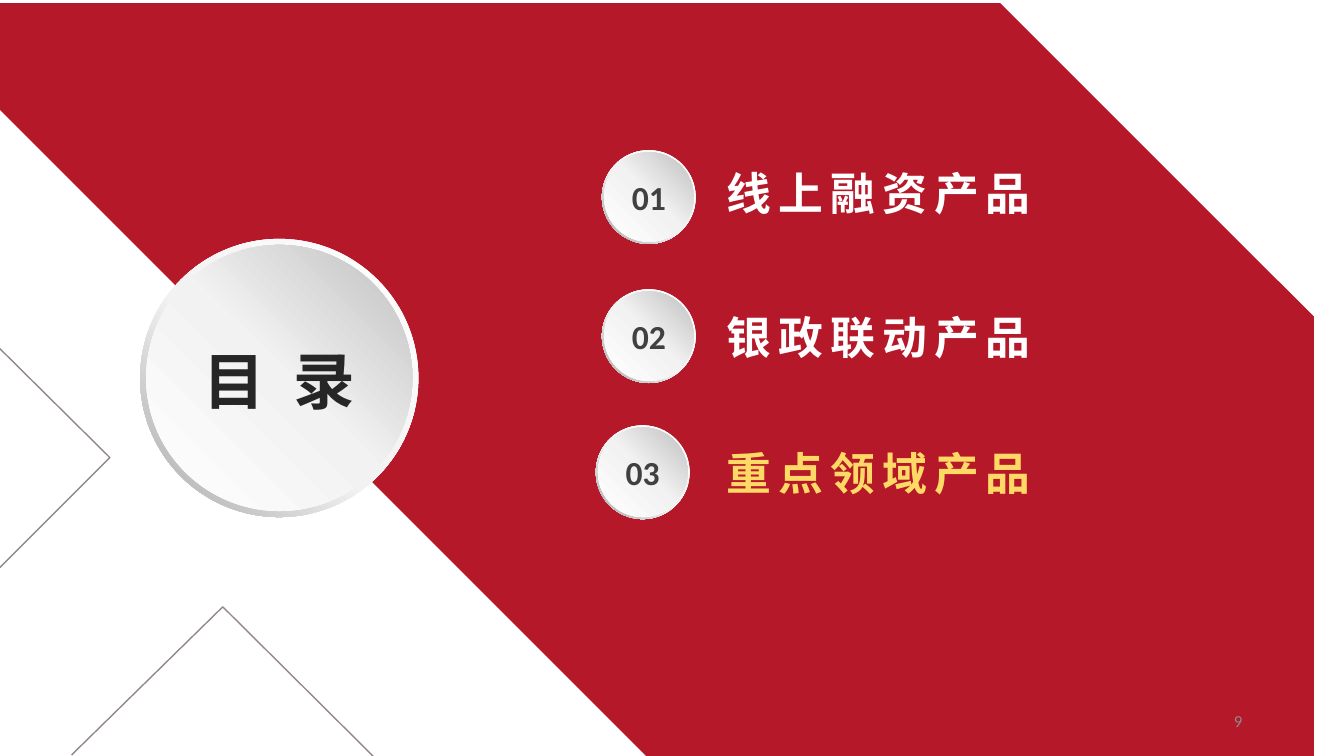
"""Agenda slide with a red banner, a title disc and three numbered entries."""
from copy import deepcopy
from dataclasses import dataclass

from pptx import Presentation
from pptx import util as u
from pptx.dml.color import RGBColor
from pptx.enum import shapes, text
from pptx.oxml.ns import qn

PX = 9144
FONT = "Calibri"
RIM = [(0, "FFFFFF"), (0.55, "F2F2F2"), (1, "A6A6A6")]
FACE = [(0, "FFFFFF"), (0.51, "F2F2F2"), (1, "BFBFBF")]


@dataclass
class Style:
    """Look of a line of text."""
    size: int
    color: str
    bold: bool = True
    align: text.PP_ALIGN = text.PP_ALIGN.LEFT
    spacing: int = 0


@dataclass
class Outline:
    """Freeform outline, either filled or drawn as an open line."""
    points: list[tuple[int, int]]
    fill: str = ""
    line: str = ""


@dataclass
class Entry:
    """Numbered agenda entry."""
    number: str
    label: str
    disc_x: int
    disc_y: int
    label_y: int
    color: str = "FFFFFF"


OUTLINES = [
    Outline([(-29, 3), (-29, 80), (643, 752), (1303, 752), (1303, 314), (992, 3)], fill="B51828"),
    Outline([(-2, 344), (109, 454), (-4, 567)], line="92888B"),
    Outline([(71, 749), (221, 602), (371, 751)], line="92888B"),
]
ENTRIES = [
    Entry("01", "线上融资产品", 597, 149, 159),
    Entry("02", "银政联动产品", 597, 287, 302),
    Entry("03", "重点领域产品", 591, 422, 437, "FFD966"),
]
CENTER = text.PP_ALIGN.CENTER
TITLE = Style(44, "262626", align=CENTER, spacing=500)
NUMBER = Style(24, "404040", align=CENTER)
PAGE = Style(12, "8C8C8C", bold=False, align=text.PP_ALIGN.RIGHT)


def rgb(value: str) -> RGBColor:
    """Turn a hex string into a colour."""
    return RGBColor.from_string(value)


def write(tf, content: str, style: Style) -> None:
    """Put one styled line into a text frame."""
    tf.text = content
    p = tf.paragraphs[0]
    p.alignment = style.align
    r = p.runs[0]
    r.font.name, r.font.size, r.font.bold = FONT, u.Pt(style.size), style.bold
    r.font.color.rgb = rgb(style.color)
    if style.spacing:
        r.font._element.set("spc", str(style.spacing))


def add_text(slide, x: int, y: int, w: int, h: int, content: str, style: Style):
    """Add a wrapping text box and return its frame."""
    tf = slide.shapes.add_textbox(x * PX, y * PX, w * PX, h * PX).text_frame
    tf.word_wrap = True
    write(tf, content, style)
    return tf


def add_outline(slide, outline: Outline) -> None:
    """Draw a freeform outline."""
    fb = slide.shapes.build_freeform(*outline.points[0], scale=PX)
    fb.add_line_segments(outline.points[1:], close=bool(outline.fill))
    sp = fb.convert_to_shape()
    sp.shadow.inherit = False
    if outline.fill:
        sp.fill.solid()
        sp.fill.fore_color.rgb = rgb(outline.fill)
        sp.line.fill.background()
    else:
        sp.fill.background()
        sp.line.color.rgb = rgb(outline.line)
        sp.line.width = u.Pt(1)


def add_round(group, kind, x: int, y: int, size: int, stops: list[tuple[float, str]], angle: int):
    """Add a round shape with a three-stop gradient to a group."""
    sp = group.shapes.add_shape(kind, x * PX, y * PX, size * PX, size * PX)
    sp.shadow.inherit = False
    sp.line.fill.background()
    sp.fill.gradient()
    sp.fill.gradient_angle = angle
    last = sp._element.spPr.findall(".//" + qn("a:gs"))[-1]
    last.addnext(deepcopy(last))
    for stop, (position, color) in zip(sp.fill.gradient_stops, stops):
        stop.position = position
        stop.color.rgb = rgb(color)
    return sp


def add_disc(slide, x: int, y: int, size: int, inset: int):
    """Add a rimmed disc and return its face."""
    group = slide.shapes.add_group_shape()
    kinds = shapes.MSO_SHAPE
    rim = add_round(group, kinds.DONUT, x, y, size, RIM, 225)
    rim.adjustments[0] = 0.049
    return add_round(group, kinds.OVAL, x + inset, y + inset, size - 2 * inset, FACE, 45)


def add_entry(slide, entry: Entry) -> None:
    """Add a numbered disc and its label."""
    tf = add_disc(slide, entry.disc_x, entry.disc_y, 93, 2).text_frame
    tf.vertical_anchor = text.MSO_ANCHOR.MIDDLE
    write(tf, entry.number, NUMBER)
    label = add_text(slide, 711, entry.label_y, 451, 63, entry.label,
                     Style(32, entry.color, spacing=500))
    label.auto_size = text.MSO_AUTO_SIZE.SHAPE_TO_FIT_TEXT


def main() -> None:
    """Build and save the slide."""
    prs = Presentation()
    prs.slide_width, prs.slide_height = 1333 * PX, 750 * PX
    slide = prs.slides.add_slide(prs.slide_layouts[6])
    for outline in OUTLINES:
        add_outline(slide, outline)
    add_disc(slide, 139, 237, 276, 6)
    title = add_text(slide, 175, 335, 204, 84, "目 录", TITLE)
    title.auto_size = text.MSO_AUTO_SIZE.SHAPE_TO_FIT_TEXT
    for entry in ENTRIES:
        add_entry(slide, entry)
    page = add_text(slide, 942, 695, 300, 40, "9", PAGE)
    page.vertical_anchor = text.MSO_ANCHOR.MIDDLE
    prs.save("out.pptx")


if __name__ == "__main__":
    main()
